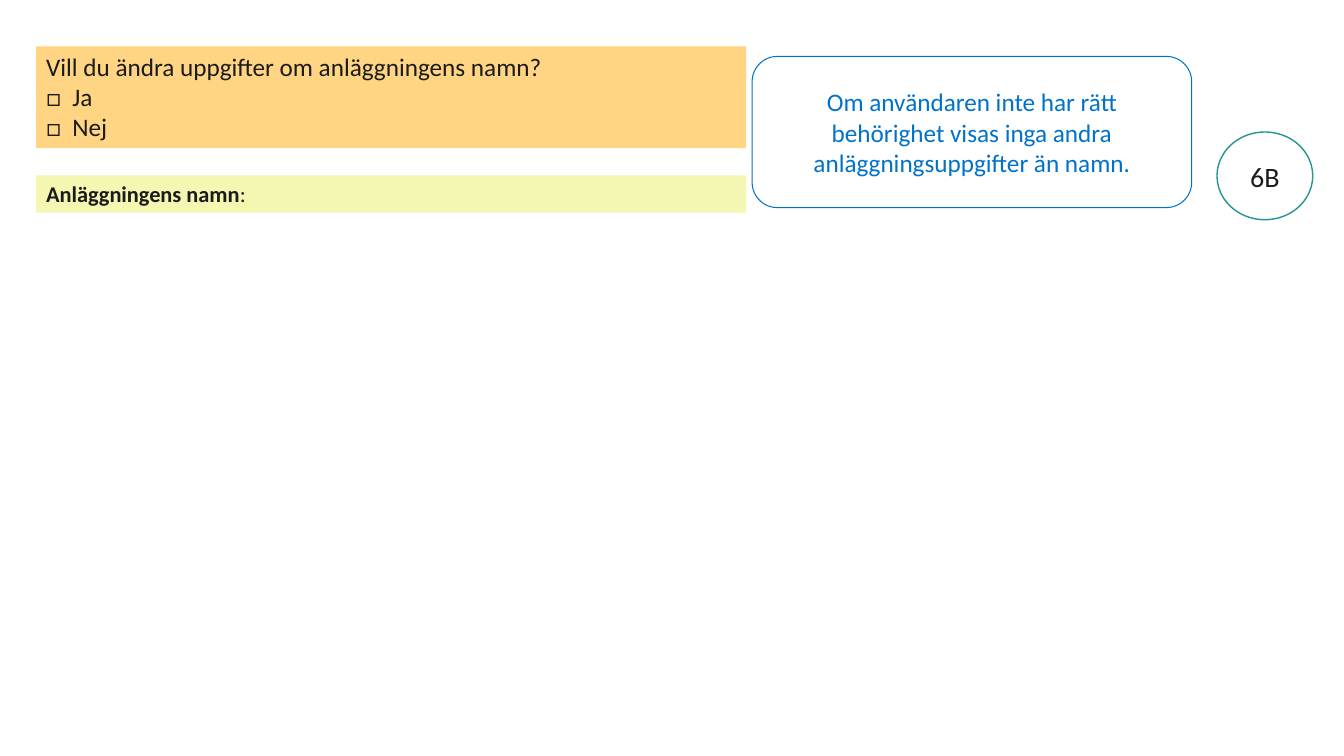
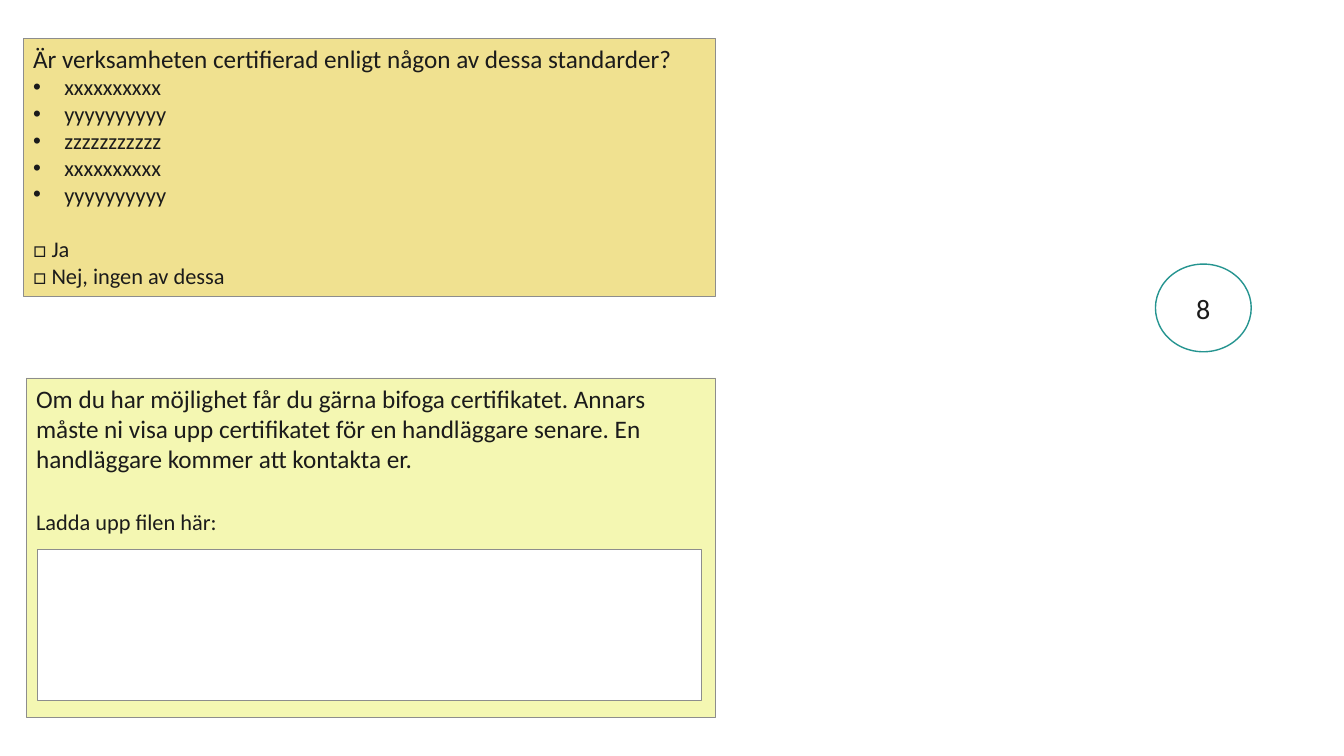
"""Build two form slides: facility name and certification."""
from lxml.etree import SubElement
from pptx import Presentation
from pptx.dml.color import RGBColor
from pptx.enum.shapes import MSO_SHAPE as Shape
from pptx.enum.text import MSO_ANCHOR as Anchor, PP_ALIGN as Align
from pptx.oxml.ns import qn
from pptx.util import Inches, Pt

FONT = "Calibri"
COLORS = {
    "text": "1B1B1B", "blue": "0072CA", "teal": "259490", "gray": "8D8D8D",
    "white": "FFFFFF", "orange": "FFD583", "lime": "F4F7B2", "sand": "F0E190",
}

NAME_QUESTION = [
    {"runs": [("Vill du ändra uppgifter om anläggningens namn?", False)]},
    {"runs": [("□\tJa", False)], "hang": 0.26},
    {"runs": [("□\tNej", False)], "hang": 0.26},
]
NAME_FIELD = [{"runs": [("Anläggningens namn", True), (":", False)], "size": 16}]
ACCESS_NOTE = [{"runs": [(
    "Om användaren inte har rätt behörighet visas inga "
    "andra anläggningsuppgifter än namn.", False)]}]

STANDARDS = ["xxxxxxxxxx", "yyyyyyyyyy", "zzzzzzzzzzz", "xxxxxxxxxx", "yyyyyyyyyy"]
CERTIFICATE_QUESTION = [
    {"runs": [("Är verksamheten certifierad enligt någon av dessa standarder?", False)]},
    *[{"runs": [(name, False)], "size": 16, "hang": 0.31, "bullet": "•"}
      for name in STANDARDS],
    {"runs": [("□ Ja", False)], "size": 16, "before": 19.5},
    {"runs": [("□ Nej, ingen av dessa", False)], "size": 16},
]
UPLOAD_REQUEST = [
    {"runs": [(
        "Om du har möjlighet får du gärna bifoga certifikatet. Annars måste ni "
        "visa upp certifikatet för en handläggare senare. En handläggare kommer "
        "att kontakta er.", False)]},
    {"runs": [("Ladda upp filen här:", False)], "size": 16, "before": 24.4},
]


def rgb(name):
    return RGBColor.from_string(COLORS[name])


def write_paragraph(para, content, color, align):
    para.alignment = align
    if "hang" in content:
        indent = Inches(content["hang"])
        props = para._p.get_or_add_pPr()
        props.set("marL", str(indent))
        props.set("indent", str(-indent))
        if "bullet" in content:
            SubElement(props, qn("a:buFont")).set("typeface", "Arial")
            SubElement(props, qn("a:buChar")).set("char", content["bullet"])
    if "before" in content:
        para.space_before = Pt(content["before"])
    for text, bold in content["runs"]:
        span = para.add_run()
        span.text = text
        span.font.name = FONT
        span.font.size = Pt(content.get("size", 18))
        span.font.bold = bold
        span.font.color.rgb = rgb(color)


def add_box(page, place, paragraphs=(), kind=Shape.RECTANGLE, fill=None,
            line=None, width=0.5, color="text", centered=False):
    box = page.shapes.add_shape(kind, *map(Inches, place))
    box.shadow.inherit = False
    if fill:
        box.fill.solid()
        box.fill.fore_color.rgb = rgb(fill)
    else:
        box.fill.background()
    if line:
        box.line.color.rgb = rgb(line)
        box.line.width = Pt(width)
    else:
        box.line.fill.background()
    frame = box.text_frame
    frame.word_wrap = True
    frame.vertical_anchor = Anchor.MIDDLE if centered else Anchor.TOP
    align = Align.CENTER if centered else Align.LEFT
    for index, content in enumerate(paragraphs):
        para = frame.add_paragraph() if index else frame.paragraphs[0]
        write_paragraph(para, content, color, align)


def add_step(page, left, top, label):
    add_box(page, (left, top, 0.95, 0.87), [{"runs": [(label, False)], "size": 20}],
            Shape.OVAL, "white", "teal", 1, centered=True)


def add_name_page(page):
    add_box(page, (0.36, 0.46, 7.04, 1.01), NAME_QUESTION, fill="orange")
    add_step(page, 12.07, 1.31, "6B")
    add_box(page, (7.46, 0.56, 4.36, 1.5), ACCESS_NOTE, Shape.ROUNDED_RECTANGLE,
            line="blue", width=0.75, color="blue", centered=True)
    add_box(page, (0.36, 1.74, 7.04, 0.37), NAME_FIELD, fill="lime")


def add_certificate_page(page):
    add_box(page, (0.26, 3.75, 6.84, 3.37), UPLOAD_REQUEST, fill="lime", line="gray")
    add_box(page, (0.37, 5.45, 6.59, 1.5), fill="white", line="gray", width=1)
    add_box(page, (0.23, 0.38, 6.87, 2.56), CERTIFICATE_QUESTION,
            fill="sand", line="gray")
    add_step(page, 11.46, 2.62, "8")


def main():
    deck = Presentation()
    deck.slide_width, deck.slide_height = Inches(13.33), Inches(7.5)
    for build in (add_name_page, add_certificate_page):
        build(deck.slides.add_slide(deck.slide_layouts[6]))
    deck.save("out.pptx")


if __name__ == "__main__":
    main()
